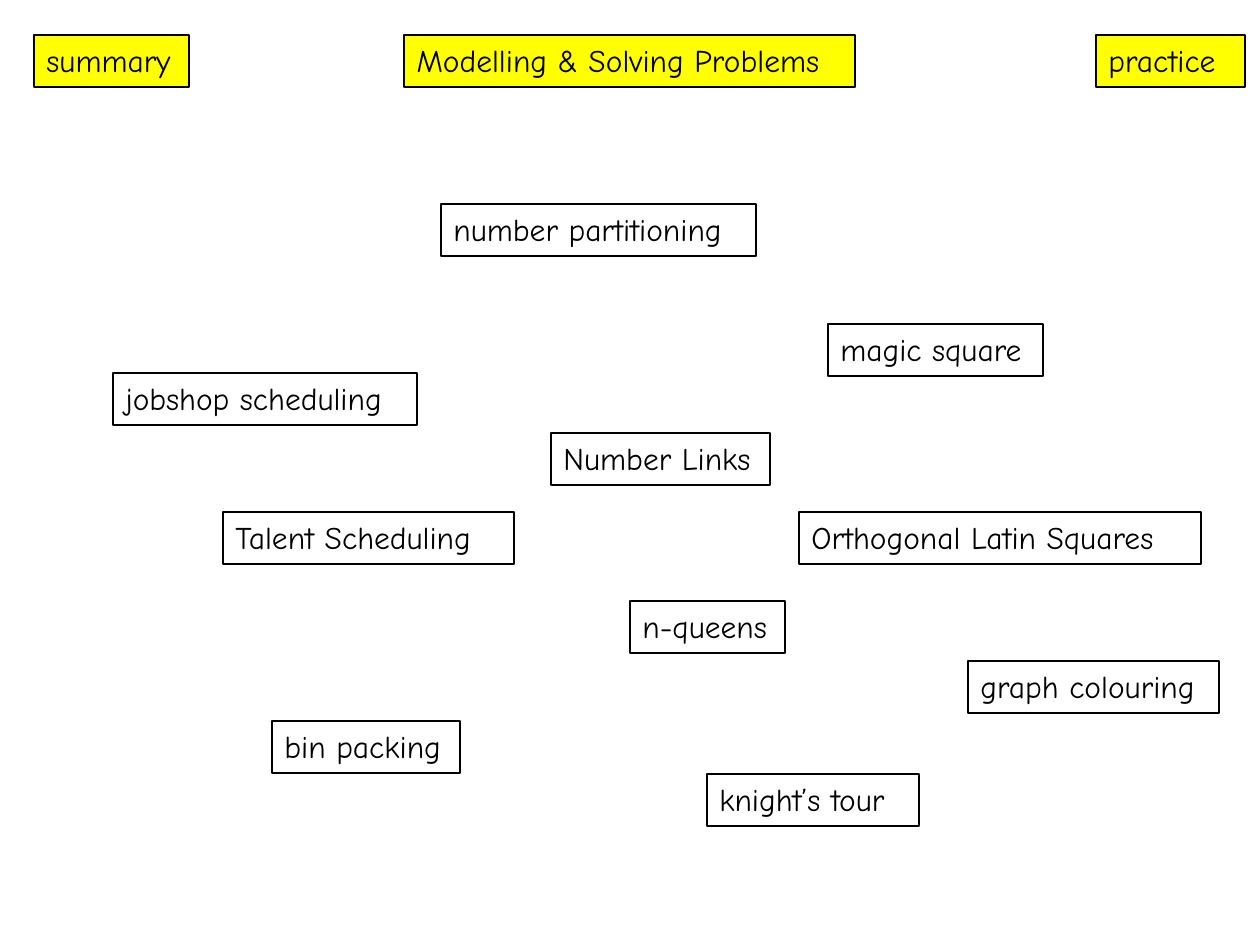
"""Build the overview slide of modelling and solving problems."""
import pptx
import pptx.dml.color
import pptx.enum.text
import pptx.util

THEME = {
    "font": "Comic Neue",
    "size": pptx.util.Pt(18),
    "ink": pptx.dml.color.RGBColor(0, 0, 0),
    "highlight": pptx.dml.color.RGBColor(255, 255, 0),
    "border": pptx.util.Pt(0.75),
}
SLIDE_WIDTH, SLIDE_HEIGHT = 1260, 945
LABEL_HEIGHT = 52
HEADING_TOP = 35

TITLE = ("Modelling & Solving Problems", 404, 451)
SIDE_HEADINGS = [("summary", 34, 155), ("practice", 1096, 149)]
PROBLEMS = [
    ("number partitioning", 441, 204, 315),
    ("magic square", 828, 324, 215),
    ("jobshop scheduling", 113, 373, 304),
    ("Number Links", 551, 433, 219),
    ("Talent Scheduling", 223, 512, 291),
    ("Orthogonal Latin Squares", 799, 512, 402),
    ("n-queens", 630, 601, 155),
    ("graph colouring", 968, 661, 251),
    ("bin packing", 272, 721, 188),
    ("knight’s tour", 707, 774, 212),
]


def px(length):
    return pptx.util.Emu(round(length * 914400 / 126))


def format_label(label, words, left, top, width, highlighted=False):
    label.left, label.top = px(left), px(top)
    label.width, label.height = px(width), px(LABEL_HEIGHT)
    label.line.color.rgb = THEME["ink"]
    label.line.width = THEME["border"]
    if highlighted:
        label.fill.solid()
        label.fill.fore_color.rgb = THEME["highlight"]
    else:
        label.fill.background()

    frame = label.text_frame
    frame.word_wrap = True
    frame.auto_size = pptx.enum.text.MSO_AUTO_SIZE.NONE
    frame.vertical_anchor = pptx.enum.text.MSO_ANCHOR.TOP
    paragraph = frame.paragraphs[0]
    paragraph.alignment = pptx.enum.text.PP_ALIGN.LEFT
    run = paragraph.add_run()
    run.text = words
    run.font.name = THEME["font"]
    run.font.size = THEME["size"]
    run.font.color.rgb = THEME["ink"]


def main():
    deck = pptx.Presentation()
    deck.slide_width, deck.slide_height = px(SLIDE_WIDTH), px(SLIDE_HEIGHT)
    slide = deck.slides.add_slide(deck.slide_layouts.get_by_name("Title Only"))

    words, left, width = TITLE
    format_label(slide.shapes.title, words, left, HEADING_TOP, width, True)

    labels = [(words, left, HEADING_TOP, width, True)
              for words, left, width in SIDE_HEADINGS] + PROBLEMS
    for label in labels:
        format_label(slide.shapes.add_textbox(0, 0, 0, 0), *label)

    deck.save("out.pptx")


if __name__ == "__main__":
    main()
